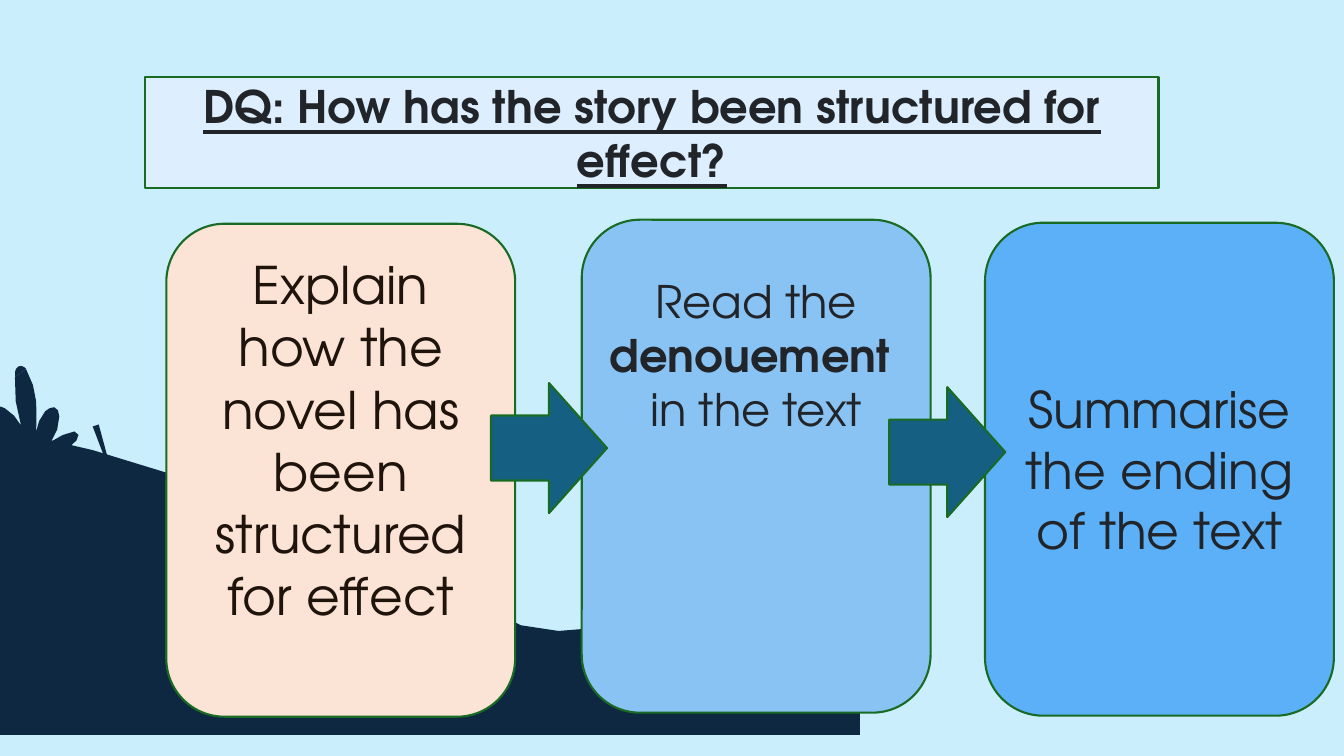
from math import cos, radians, sin

from pptx import Presentation
from pptx.dml.color import RGBColor
from pptx.enum.shapes import MSO_SHAPE as Kind
from pptx.enum.text import MSO_ANCHOR as Anchor, PP_ALIGN as Align
from pptx.util import Inches, Pt

FONT = "TeX Gyre Adventor"
INK, NAVY, GREEN, TEAL = "212529", "0E2841", "196B24", "156082"

# Outlines in inches: two numbers make a corner, six make a Bezier curve
HILL = [
    (-0.3, 4.18), (-0.3, 7.29), (8.53, 7.29), (8.53, 6.64), (7.91, 6.41),
    (7.84, 6.41, 7.74, 6.41, 7.67, 6.36),
    (7.57, 6.29, 7.21, 6.15, 7.12, 6.09),
    (7.11, 6.08, 7.09, 6.08, 7.06, 6.08),
    (6.9, 6.08, 6.47, 6.22, 6.31, 6.22),
    (6.04, 6.22, 5.68, 6.24, 5.54, 6.26),
    (5.32, 6.27, 5, 6.17, 4.85, 6.05),
    (4.69, 5.91, 4.15, 5.46, 4.05, 5.45),
    (3.95, 5.43, 2.53, 5.31, 2.48, 5.3),
    (2.44, 5.29, 2.11, 4.88, 1.98, 4.79),
    (1.85, 4.69, 0.05, 4.23, -0.3, 4.18),
]
TIP = [
    (0.21, 3.63), (0.19, 3.63, 0.17, 3.64, 0.16, 3.66),
    (0.15, 3.67, 0.15, 3.69, 0.15, 3.74), (0.26, 3.66),
    (0.25, 3.65, 0.23, 3.63, 0.21, 3.63),
]
ROOT = [(0.44, 4.45), (0.56, 4.47), (0.63, 4.48)]
LEAVES = [
    (0.26, 3.66), (0.15, 3.74),
    (0.14, 3.9, 0.16, 4.06, 0.21, 4.22),
    (0.17, 4.15, 0.12, 4.09, 0.05, 4.05),
    (0.03, 4.04, 0.01, 4.03, -0.04, 4.03),
    (-0.07, 4.05, -0.07, 4.08, -0.06, 4.1),
    (-0.05, 4.2, -0.01, 4.31, 0.06, 4.39),
    (0.44, 4.45), (0.63, 4.48),
    (0.67, 4.45, 0.72, 4.41, 0.76, 4.37),
    (0.79, 4.33, 0.79, 4.29, 0.74, 4.28),
    (0.69, 4.28, 0.56, 4.34, 0.51, 4.38),
    (0.56, 4.31, 0.59, 4.22, 0.59, 4.13),
    (0.59, 4.08, 0.57, 4.05, 0.54, 4.04),
    (0.51, 4.04, 0.48, 4.05, 0.45, 4.08),
    (0.4, 4.14, 0.37, 4.21, 0.36, 4.28),
    (0.36, 4.18, 0.37, 4.08, 0.36, 3.98),
    (0.35, 3.87, 0.32, 3.77, 0.26, 3.66),
]
TWIG = [(0.98, 4.21), (0.92, 4.23), (1.05, 4.57), (1.08, 4.58)]


def color(code):
    return RGBColor.from_string(code)


def paint(shape, fill, line=None):
    shape.shadow.inherit = False
    shape.fill.solid()
    shape.fill.fore_color.rgb = color(fill)
    if line:
        shape.line.color.rgb = color(line)
        shape.line.width = Pt(1.5)
    else:
        shape.line.fill.background()


def trace(steps, count=2):
    """Turn corners and curves into a list of points."""
    points = []
    for step in steps:
        if len(step) == 2:
            points.append(step)
            continue
        (x, y), (ax, ay, bx, by, cx, cy) = points[-1], step
        for i in range(1, count + 1):
            t = i / count
            u = 1 - t
            w = (u**3, 3 * u * u * t, 3 * u * t * t, t**3)
            points.append((w[0] * x + w[1] * ax + w[2] * bx + w[3] * cx,
                           w[0] * y + w[1] * ay + w[2] * by + w[3] * cy))
    return points


def spin(point, hub, turn):
    """Turn a point about the hub, clockwise in degrees."""
    dx, dy = point[0] - hub[0], point[1] - hub[1]
    c, s = cos(radians(turn)), sin(radians(turn))
    return hub[0] + dx * c - dy * s, hub[1] + dx * s + dy * c


def add_free(slide, steps, hub=(0, 0), turn=0):
    """Draw an outline whose frame is turned about its hub."""
    points = [spin(point, hub, -turn) for point in trace(steps)]
    start, *rest = [(Inches(x), Inches(y)) for x, y in points]
    pen = slide.shapes.build_freeform(*start)
    pen.add_line_segments(rest, close=True)
    shape = pen.convert_to_shape()
    shape.rotation = turn
    paint(shape, NAVY)


def add_box(slide, kind, box, fill):
    shape = slide.shapes.add_shape(kind, *map(Inches, box))
    paint(shape, fill, GREEN)
    return shape


def add_text(shape, lines, size, ink=INK, bold=None, under=None, foot=0.05):
    """Write centred lines; each line is a list of (text, bold) runs."""
    frame = shape.text_frame
    frame.word_wrap = True
    frame.vertical_anchor = Anchor.MIDDLE
    frame.margin_bottom = Inches(foot)
    for i, runs in enumerate(lines):
        para = frame.add_paragraph() if i else frame.paragraphs[0]
        para.alignment = Align.CENTER
        font = para.font
        font.name, font.size = FONT, Pt(size)
        font.bold, font.underline = bold, under
        font.color.rgb = color(ink)
        for text, heavy in runs:
            run = para.add_run()
            run.text = text
            if heavy:
                run.font.bold = True


def main():
    deck = Presentation()
    deck.slide_width, deck.slide_height = Inches(13.33), Inches(7.5)
    slide = deck.slides.add_slide(deck.slide_layouts[6])
    back = slide.background.fill
    back.solid()
    back.fore_color.rgb = color("CAEEFB")

    # Hillside with plant and twig
    add_free(slide, HILL)
    add_free(slide, TIP, (0.2, 3.69), 8.3)
    add_free(slide, ROOT, (0.53, 4.46), 8.3)
    add_free(slide, LEAVES, (0.38, 4.07), 8.3)
    add_free(slide, TWIG, (1.01, 4.39), 22.1)

    # Cards: left, top, fill, lines, size, ink, bottom inset
    cards = [
        (5.77, 2.18, "89C3F3",
         [[("Read the ", False), ("denouement ", True)],
          [("in the text", False)]], 32, INK, 2.26),
        (9.77, 2.21, "5BB0F7",
         [[("Summarise the ending of the text", False)]], 36, INK, 0.05),
        (1.65, 2.22, "FBE3D6",
         [[("Explain how the novel has been structured for effect", False)]],
         37, "1F140C", 0.66),
    ]
    for left, top, fill, lines, size, ink, foot in cards:
        card = add_box(slide, Kind.ROUNDED_RECTANGLE,
                       (left, top, 3.46, 4.89), fill)
        add_text(card, lines, size, ink, foot=foot)

    # Arrows between the cards
    for left, top in [(8.82, 3.84), (4.87, 3.8)]:
        add_box(slide, Kind.RIGHT_ARROW, (left, top, 1.15, 1.29), TEAL)

    # Question
    title = add_box(slide, Kind.RECTANGLE, (1.44, 0.76, 10.05, 1.11), "DDEEFF")
    ask = "DQ: How has the story been structured for effect?"
    add_text(title, [[(ask, False)]], 32, bold=True, under=True)

    deck.save("out.pptx")


if __name__ == "__main__":
    main()
